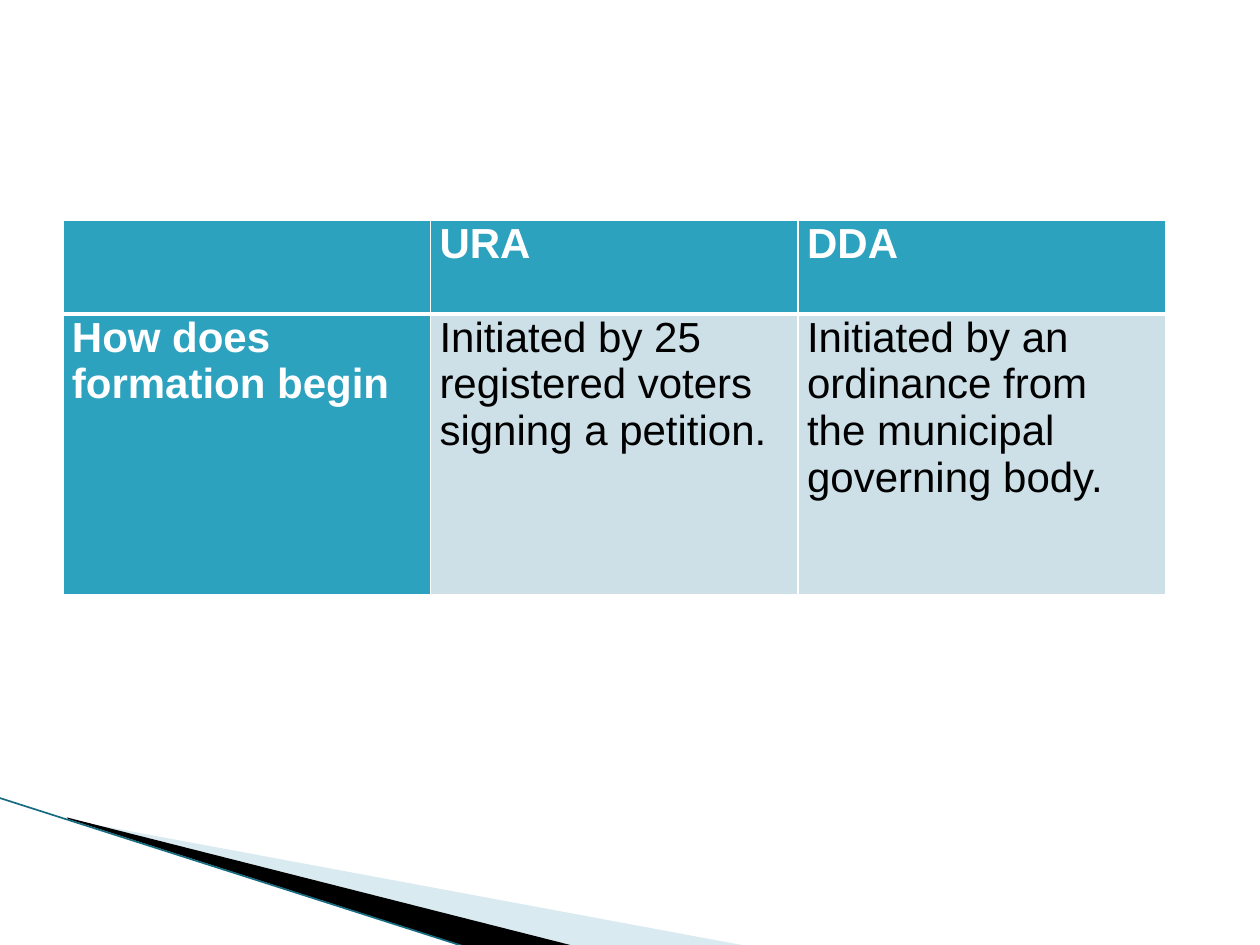
from lxml import etree
from pptx import Presentation
from pptx.dml.color import RGBColor
from pptx.enum.shapes import MSO_CONNECTOR
from pptx.oxml.ns import qn
from pptx.util import Cm, Pt

STRAIGHT = MSO_CONNECTOR.STRAIGHT
WHITE = RGBColor(0xFF, 0xFF, 0xFF)
BLACK = RGBColor(0, 0, 0)
TEAL = RGBColor(0x2D, 0xA2, 0xBF)
DARK_TEAL = RGBColor(0x16, 0x6B, 0x80)
PALE_TEAL = RGBColor(0xCD, 0xE0, 0xE8)
WEDGE_BLUE = RGBColor(0xA0, 0xCB, 0xDC)

ROWS = [
    ["", "URA", "DDA"],
    [
        "How does formation begin",
        "Initiated by 25 registered voters signing a petition.",
        "Initiated by an ordinance from the municipal governing body.",
    ],
]


class SlideBuilder:
    """Draws styled elements on the current slide."""

    font_name = "Arial"
    font_size = Pt(24)
    side_margin = Cm(0.18)

    def __init__(self, slide):
        self.slide = slide

    def wedge(self, points, color, opacity=100):
        start, *rest = [(Cm(x), Cm(y)) for x, y in points]
        builder = self.slide.shapes.build_freeform(*start)
        builder.add_line_segments(rest, close=True)
        shape = builder.convert_to_shape()
        shape.shadow.inherit = False
        shape.fill.solid()
        shape.fill.fore_color.rgb = color
        shape.line.fill.background()
        if opacity < 100:
            fill_color = shape.fill._xPr.find(qn("a:solidFill"))[0]
            etree.SubElement(fill_color, qn("a:alpha"), val=str(opacity * 1000))

    def line(self, start, end, color, width):
        ends = [Cm(value) for value in (*start, *end)]
        connector = self.slide.shapes.add_connector(STRAIGHT, *ends)
        connector.line.color.rgb = color
        connector.line.width = Pt(width)
        etree.SubElement(connector._element.spPr, qn("a:effectLst"))

    def border(self, cell, side, width):
        properties = cell._tc.get_or_add_tcPr()
        edge = etree.SubElement(properties, qn(f"a:ln{side}"), w=str(Pt(width)))
        fill = etree.SubElement(edge, qn("a:solidFill"))
        etree.SubElement(fill, qn("a:srgbClr"), val=str(WHITE))

    def cell(self, cell, text, is_heading, widths):
        for side, width in widths.items():
            self.border(cell, side, width)
        cell.fill.solid()
        cell.fill.fore_color.rgb = TEAL if is_heading else PALE_TEAL
        cell.margin_left = cell.margin_right = self.side_margin
        cell.margin_top = cell.margin_bottom = 0
        cell.text = text
        font = cell.text_frame.paragraphs[0].font
        font.name = self.font_name
        font.size = self.font_size
        font.bold = is_heading
        font.color.rgb = WHITE if is_heading else BLACK

    def table(self, rows, left, top, column_width, row_heights):
        columns = len(rows[0])
        frame = self.slide.shapes.add_table(
            len(rows), columns, Cm(left), Cm(top),
            Cm(column_width * columns), Cm(sum(row_heights)),
        )
        table = frame.table
        table.first_col = True
        for column in table.columns:
            column.width = Cm(column_width)
        for r, texts in enumerate(rows):
            table.rows[r].height = Cm(row_heights[r])
            widths = {"L": 1, "R": 1, "T": 3 if r == 1 else 1, "B": 3 if r == 0 else 1}
            for c, text in enumerate(texts):
                self.cell(table.cell(r, c), text, r == 0 or c == 0, widths)


def main():
    deck = Presentation()
    deck.slide_width = Cm(25.4)
    deck.slide_height = Cm(19.05)
    page = SlideBuilder(deck.slides.add_slide(deck.slide_layouts[6]))
    page.wedge(
        [(1.4, 16.53), (15.11, 19.08), (11.58, 19.08), (1.4, 16.51)], WEDGE_BLUE, 40
    )
    page.wedge([(1.35, 16.48), (11.61, 19.08), (9.45, 19.1), (1.37, 16.51)], BLACK)
    page.line((-0.03, 16.08), (9.42, 19.1), DARK_TEAL, 0.95)
    page.table(ROWS, 1.27, 4.45, 7.41, [1.88, 5.66])
    deck.save("out.pptx")


if __name__ == "__main__":
    main()
